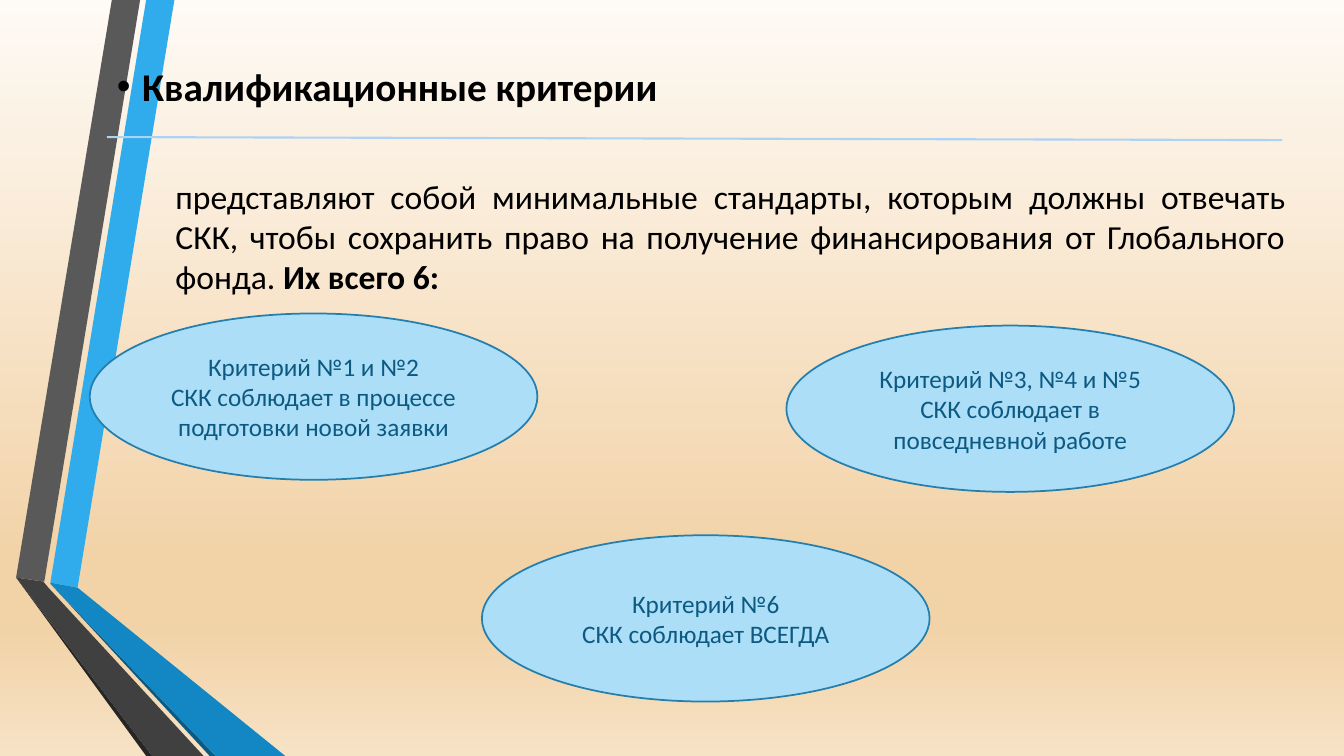
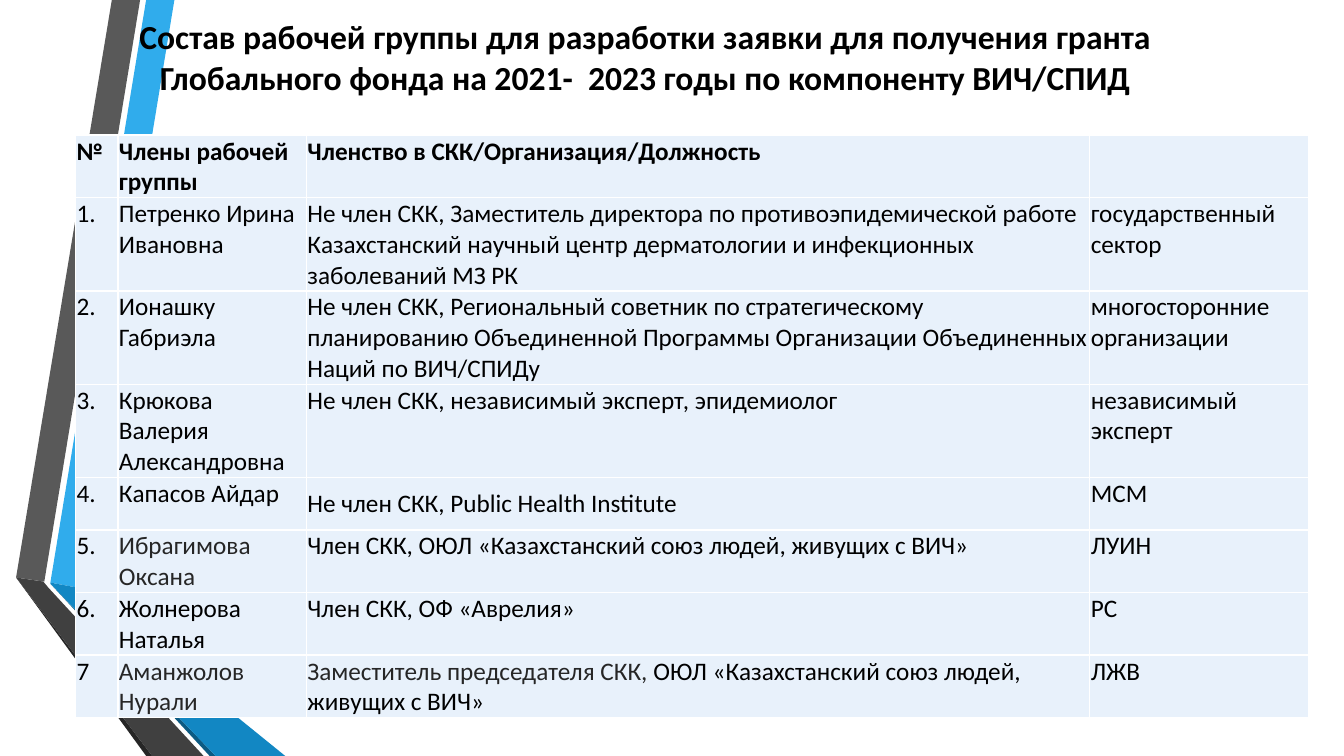
"""Build two slides on the criteria and the working group of a grant bid."""
from dataclasses import dataclass
from typing import NamedTuple

from lxml.etree import SubElement
from pptx import Presentation
from pptx.dml.color import RGBColor
from pptx.enum.shapes import MSO_CONNECTOR, MSO_SHAPE
from pptx.enum.text import MSO_ANCHOR, MSO_AUTO_SIZE, PP_ALIGN
from pptx.oxml.ns import qn
from pptx.slide import Slide
from pptx.util import Inches, Pt

FONT = "Calibri"
HUES = {
    "ink": "000000", "soft": "262626", "white": "FFFFFF",
    "sky": "30ACEC", "gray": "595959", "coal": "262626",
    "navy": "0C5A82", "blue": "1287C3", "dark": "404040",
    "rule": "AED2F4", "oval": "ACDEF7", "edge": "247FAF", "cell": "E8F1FB",
}
FADE = [(0, "FEFAF5"), (74, "F2D3A8"), (83, "F2D3A8"), (100, "F6E2C5")]


class Run(NamedTuple):
    text: str
    hue: str = ""
    bold: bool = False


@dataclass
class Band:
    hue: str
    dots: list[tuple[float, float]]


@dataclass
class Oval:
    left: float
    top: float
    head: str
    note: str


@dataclass
class Row:
    high: float
    mark: str
    name: str | Run
    post: str | tuple
    group: str


BANDS = [
    Band("sky", [(0.5, 5.78), (0.77, 5.83), (1.73, 0), (1.45, 0)]),
    Band("gray", [(1.39, 0), (1.11, 0), (0.16, 5.73), (0.44, 5.77)]),
    Band("coal", [(0.16, 5.73), (1.45, 7.5), (1.51, 7.5)]),
    Band("navy", [(0.5, 5.79), (2.08, 7.5), (2.14, 7.5)]),
    Band("blue", [(0.5, 5.79), (2.14, 7.5), (2.83, 7.5), (0.77, 5.83), (0.5, 5.78)]),
    Band("dark", [(2.02, 7.5), (0.48, 5.83), (0.43, 5.77), (0.16, 5.73), (1.51, 7.5)]),
]
OVALS = [
    Oval(0.89, 3.11, "Критерий №1 и №2", "СКК соблюдает в процессе подготовки новой заявки"),
    Oval(7.8, 3.23, "Критерий №3, №4 и №5", "СКК соблюдает в повседневной работе"),
    Oval(4.78, 5.31, "Критерий №6", "СКК соблюдает ВСЕГДА"),
]
WIDTHS = [0.42, 1.87, 7.77, 2.17]
UNION = "ОЮЛ «Казахстанский союз людей, живущих с ВИЧ»"
ROWS = [
    Row(0.62, "№", "Члены рабочей группы", "Членство в СКК/Организация/Должность", ""),
    Row(0.92, "1.", "Петренко Ирина Ивановна",
        "Не член СКК, Заместитель директора по противоэпидемической работе "
        "Казахстанский научный центр дерматологии и инфекционных заболеваний МЗ РК",
        "государственный сектор"),
    Row(0.92, "2.", "Ионашку Габриэла",
        "Не член СКК, Региональный советник по стратегическому планированию "
        "Объединенной Программы Организации Объединенных Наций по ВИЧ/СПИДу",
        "многосторонние организации"),
    Row(0.92, "3.", "Крюкова Валерия Александровна",
        "Не член СКК, независимый эксперт, эпидемиолог", "независимый эксперт"),
    Row(0.52, "4.", "Капасов Айдар", "Не член СКК, Public Health Institute", "МСМ"),
    Row(0.62, "5.", Run("Ибрагимова Оксана", "soft"), f"Член СКК, {UNION}", "ЛУИН"),
    Row(0.62, "6.", "Жолнерова Наталья", "Член СКК, ОФ «Аврелия»", "РС"),
    Row(0.62, "7", Run("Аманжолов Нурали", "soft"),
        (Run("Заместитель председателя СКК, ", "soft"), UNION), "ЛЖВ"),
]


def tint(name: str) -> RGBColor:
    return RGBColor.from_string(HUES[name])


def write(frame, *paras, size: float, hue: str = "ink", bold: bool = False,
          align=PP_ALIGN.LEFT, lines: float = 1) -> None:
    frame.word_wrap = True
    for i, para in enumerate(paras):
        line = frame.paragraphs[0] if i == 0 else frame.add_paragraph()
        line.alignment = align
        line.line_spacing = lines
        line.space_before = Pt(0)
        for part in para if type(para) is tuple else (para,):
            part = part if isinstance(part, Run) else Run(part)
            run = line.add_run()
            run.text = part.text
            run.font.name = FONT
            run.font.size = Pt(size)
            run.font.bold = bold or part.bold
            run.font.color.rgb = tint(part.hue or hue)


def place(holder, left: float, top: float, wide: float, high: float, anchor):
    holder.left, holder.top = Inches(left), Inches(top)
    holder.width, holder.height = Inches(wide), Inches(high)
    frame = holder.text_frame
    frame.auto_size = MSO_AUTO_SIZE.NONE
    frame.vertical_anchor = anchor
    return frame


def bullet(para, sign: str = "", indent: float = 0) -> None:
    props = para._p.get_or_add_pPr()
    props.set("marL", str(Inches(indent)))
    props.set("indent", str(-Inches(indent)))
    if sign:
        SubElement(props, qn("a:buFont")).set("typeface", "Arial")
        SubElement(props, qn("a:buChar")).set("char", sign)
    else:
        SubElement(props, qn("a:buNone"))


def draw_bands(slide: Slide, master) -> None:
    tree = master.shapes.element
    for i, band in enumerate(BANDS):
        first, *rest = [(Inches(x), Inches(y)) for x, y in band.dots]
        pen = slide.shapes.build_freeform(*first)
        pen.add_line_segments(rest, close=True)
        shape = pen.convert_to_shape()
        shape.shadow.inherit = False
        shape.fill.solid()
        shape.fill.fore_color.rgb = tint(band.hue)
        shape.line.fill.background()
        shape.element.nvSpPr.cNvPr.set("id", str(100 + i))
        tree.insert(2 + i, shape.element)


def fade(slide: Slide) -> None:
    fill = slide.background.fill
    fill.gradient()
    fill.gradient_angle = 270
    stops = next(slide.element.iter(qn("a:gsLst")))
    for old in list(stops):
        stops.remove(old)
    for spot, hue in FADE:
        stop = SubElement(stops, qn("a:gs"), pos=str(spot * 1000))
        SubElement(stop, qn("a:srgbClr"), val=hue)


def draw_oval(slide: Slide, oval: Oval) -> None:
    shape = slide.shapes.add_shape(MSO_SHAPE.OVAL, Inches(oval.left), Inches(oval.top),
                                   Inches(4.44), Inches(1.65))
    shape.shadow.inherit = False
    shape.fill.solid()
    shape.fill.fore_color.rgb = tint("oval")
    shape.line.color.rgb = tint("edge")
    shape.line.width = Pt(1.25)
    shape.text_frame.vertical_anchor = MSO_ANCHOR.MIDDLE
    write(shape.text_frame, oval.head, oval.note, size=18, hue="navy", align=PP_ALIGN.CENTER)


def draw_rule(slide: Slide) -> None:
    rule = slide.shapes.add_connector(MSO_CONNECTOR.STRAIGHT, Inches(1.06), Inches(1.36),
                                      Inches(12.72), Inches(1.39))
    rule.line.color.rgb = tint("rule")
    rule.line.width = Pt(1.5)
    SubElement(rule.element.spPr, qn("a:effectLst"))


def border(cell) -> None:
    props = cell._tc.get_or_add_tcPr()
    for i, side in enumerate(("lnL", "lnR", "lnT", "lnB")):
        edge = SubElement(props, qn(f"a:{side}"), w=str(Pt(1)))
        fill = SubElement(edge, qn("a:solidFill"))
        SubElement(fill, qn("a:srgbClr"), val=HUES["white"])
        props.insert(i, edge)


def draw_table(slide: Slide) -> None:
    table = slide.shapes.add_table(
        len(ROWS), len(WIDTHS), Inches(0.75), Inches(1.34),
        Inches(sum(WIDTHS)), Inches(sum(row.high for row in ROWS))).table
    table.first_row = table.horz_banding = False
    for col, wide in zip(table.columns, WIDTHS):
        col.width = Inches(wide)
    for i, row in enumerate(ROWS):
        table.rows[i].height = Inches(row.high)
        for j, text in enumerate((row.mark, row.name, row.post, row.group)):
            cell = table.cell(i, j)
            cell.margin_left = cell.margin_right = cell.margin_top = Inches(0.01)
            cell.margin_bottom = 0
            cell.fill.solid()
            cell.fill.fore_color.rgb = tint("cell")
            border(cell)
            if text:
                para = (text,) if isinstance(text, Run) else text
                write(cell.text_frame, para, size=18, bold=i == 0)
    table.cell(4, 2).vertical_anchor = MSO_ANCHOR.MIDDLE


def tests_slide(deck) -> Slide:
    slide = deck.slides.add_slide(deck.slide_layouts[1])
    fade(slide)
    body = place(slide.placeholders[1], 1.64, 1.27, 11.21, 2.59, MSO_ANCHOR.MIDDLE)
    body.margin_bottom = Inches(0.5)
    write(body, ("представляют собой минимальные стандарты, которым должны отвечать СКК, "
                 "чтобы сохранить право на получение финансирования от Глобального фонда. ",
                 Run("Их всего 6:", bold=True)), size=24, align=PP_ALIGN.JUSTIFY)
    bullet(body.paragraphs[0])
    head = place(slide.shapes.title, 1.06, 0.62, 11.5, 0.77, MSO_ANCHOR.TOP)
    write(head, "Квалификационные критерии", size=28, bold=True, lines=0.9)
    bullet(head.paragraphs[0], "•", 0.25)
    draw_rule(slide)
    for oval in OVALS:
        draw_oval(slide, oval)
    return slide


def group_slide(deck) -> None:
    slide = deck.slides.add_slide(deck.slide_layouts[5])
    head = place(slide.shapes.title, 0.65, 0.35, 11.5, 0.42, MSO_ANCHOR.MIDDLE)
    write(head, "Состав рабочей группы для разработки заявки для получения гранта "
          "Глобального фонда на 2021-  2023 годы по компоненту ВИЧ/СПИД",
          size=24, bold=True, align=PP_ALIGN.CENTER)
    draw_table(slide)


def main() -> None:
    deck = Presentation()
    deck.slide_width, deck.slide_height = Inches(13.33), Inches(7.5)
    draw_bands(tests_slide(deck), deck.slide_master)
    group_slide(deck)
    deck.save("out.pptx")


if __name__ == "__main__":
    main()
